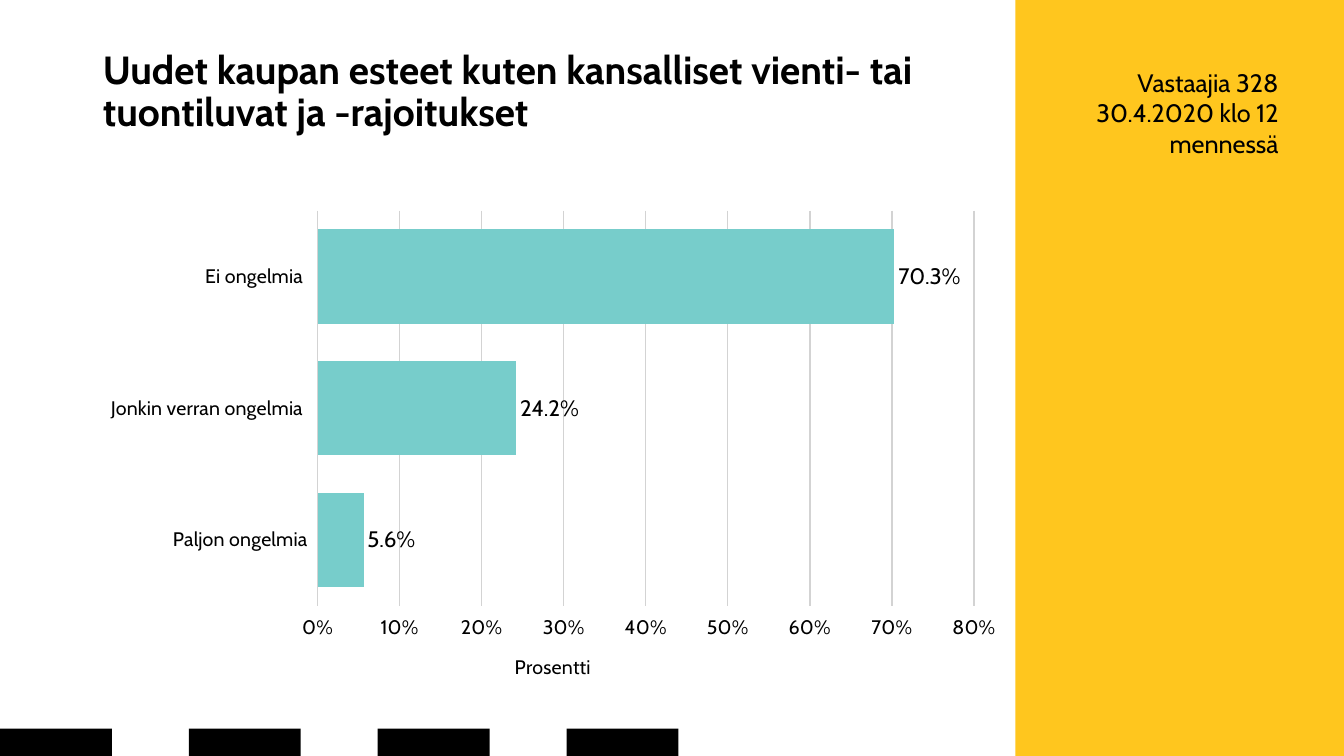
"""Build a survey slide with a bar chart of answers about new trade barriers."""
from lxml import etree
from pptx import Presentation
from pptx.chart.data import CategoryChartData
from pptx.dml.color import RGBColor
from pptx.enum.chart import XL_CHART_TYPE as ChartType, XL_LABEL_POSITION as LabelPosition
from pptx.enum.chart import XL_TICK_LABEL_POSITION as TickLabels, XL_TICK_MARK as Tick
from pptx.enum.shapes import MSO_SHAPE as Shape
from pptx.enum.text import MSO_ANCHOR as Anchor, MSO_AUTO_SIZE as AutoSize, PP_ALIGN as Align
from pptx.oxml.ns import qn
from pptx.util import Inches, Pt

HEADING = "Uudet kaupan esteet kuten kansalliset vienti- tai tuontiluvat ja -rajoitukset"
RESPONDENTS = ["Vastaajia 328", "30.4.2020 klo 12 mennessä"]
ANSWERS = {"Ei ongelmia ": 0.703, "Jonkin verran ongelmia ": 0.242, "Paljon ongelmia": 0.056}
AXIS_TITLE = "Prosentti"
FONT = "Cabin"
COLORS = {"text": "000000", "panel": "FFC61E", "block": "000000", "bar": "77CDCB", "grid": "D3D3D3"}
CHART_LEFT, CHART_TOP, CHART_WIDTH, CHART_HEIGHT = 0.92, 2, 9.14, 4.98
PLOT_LEFT, PLOT_TOP, PLOT_WIDTH, PLOT_HEIGHT = 3.15, 2.09, 6.51, 3.92
AXIS_TITLE_LEFT, AXIS_TITLE_TOP = 5.07, 6.45
BLOCK_COUNT, BLOCK_STEP = 4, 1.873


def color(name):
    return RGBColor.from_string(COLORS[name])


def style(font, size, bold=False):
    font.name, font.size, font.bold = FONT, Pt(size), bold
    font.color.rgb = color("text")


def add_rectangle(slide, left, top, width, height, fill):
    rectangle = slide.shapes.add_shape(
        Shape.RECTANGLE, Inches(left), Inches(top), Inches(width), Inches(height))
    rectangle.shadow.inherit = False
    rectangle.fill.solid()
    rectangle.fill.fore_color.rgb = color(fill)
    rectangle.line.fill.background()


def place(part, left, top, **settings):
    layout = part.get_or_add_layout() if hasattr(part, "get_or_add_layout") else part.find(qn("c:layout"))
    if layout is None:
        layout = etree.Element(qn("c:layout"))
        part.insert(0, layout)
    for old in list(layout):
        layout.remove(old)
    manual = etree.SubElement(layout, qn("c:manualLayout"))
    target = {"layoutTarget": "inner"} if settings else {}
    position = {"xMode": "edge", "yMode": "edge",
                "x": (left - CHART_LEFT) / CHART_WIDTH, "y": (top - CHART_TOP) / CHART_HEIGHT}
    for key, value in {**target, **position, **settings}.items():
        etree.SubElement(manual, qn(f"c:{key}")).set("val", str(value))


def add_heading(slide):
    title = slide.shapes.title
    title.left, title.top, title.width, title.height = map(Inches, (0.92, 0.4, 9.23, 1.04))
    frame = title.text_frame
    frame.auto_size = AutoSize.NONE
    frame.word_wrap = True
    frame.vertical_anchor = Anchor.MIDDLE
    paragraph = frame.paragraphs[0]
    paragraph.alignment = Align.LEFT
    paragraph.line_spacing = 0.9
    run = paragraph.add_run()
    run.text = HEADING
    style(run.font, 28, bold=True)


def add_respondents(slide):
    frame = slide.shapes.add_textbox(
        Inches(10.71), Inches(0.62), Inches(2.07), Inches(1.01)).text_frame
    frame.word_wrap = True
    frame.auto_size = AutoSize.SHAPE_TO_FIT_TEXT
    for index, line in enumerate(RESPONDENTS):
        paragraph = frame.add_paragraph() if index else frame.paragraphs[0]
        paragraph.alignment = Align.RIGHT
        run = paragraph.add_run()
        run.text = line
        style(run.font, 18)


def add_answer_chart(slide):
    answers = CategoryChartData(number_format="0.0%")
    answers.categories = list(ANSWERS)
    answers.add_series("Series 1", list(ANSWERS.values()))
    chart = slide.shapes.add_chart(
        ChartType.BAR_CLUSTERED, Inches(CHART_LEFT), Inches(CHART_TOP),
        Inches(CHART_WIDTH), Inches(CHART_HEIGHT), answers).chart
    style(chart.font, 18)
    chart.has_legend = False
    chart.has_title = False

    plot = chart.plots[0]
    plot.gap_width = 40
    plot.vary_by_categories = False
    bars = plot.series[0].format
    bars.fill.solid()
    bars.fill.fore_color.rgb = color("bar")
    bars.line.fill.background()
    plot.has_data_labels = True
    labels = plot.data_labels
    labels.show_value = True
    labels.number_format, labels.number_format_is_linked = "0.0%", False
    labels.position = LabelPosition.OUTSIDE_END
    style(labels.font, 16)

    answer_axis, percent_axis = chart.category_axis, chart.value_axis
    for axis in (answer_axis, percent_axis):
        axis.major_tick_mark, axis.minor_tick_mark = Tick.CROSS, Tick.NONE
        axis.format.line.fill.background()
        style(axis.tick_labels.font, 14)
    answer_axis.reverse_order = True
    percent_axis.tick_label_position = TickLabels.HIGH
    percent_axis.minimum_scale, percent_axis.maximum_scale = 0, 0.8
    percent_axis.major_unit = 0.1
    percent_axis.tick_labels.number_format = "0%"
    percent_axis.tick_labels.number_format_is_linked = False
    gridline = percent_axis.major_gridlines.format.line
    gridline.color.rgb, gridline.width = color("grid"), Pt(1)

    axis_title = percent_axis.axis_title
    run = axis_title.text_frame.paragraphs[0].add_run()
    run.text = AXIS_TITLE
    style(run.font, 14)
    place(axis_title._element, AXIS_TITLE_LEFT, AXIS_TITLE_TOP)
    place(chart._chartSpace.chart.plotArea, PLOT_LEFT, PLOT_TOP,
          w=PLOT_WIDTH / CHART_WIDTH, h=PLOT_HEIGHT / CHART_HEIGHT)


def main():
    deck = Presentation()
    deck.slide_width, deck.slide_height = Inches(13.33), Inches(7.5)
    slide = deck.slides.add_slide(deck.slide_layouts[5])
    add_rectangle(slide, 10.07, 0, 3.26, 7.5, "panel")
    for index in range(BLOCK_COUNT):
        add_rectangle(slide, index * BLOCK_STEP, 7.23, 1.11, 0.27, "block")
    add_heading(slide)
    add_respondents(slide)
    add_answer_chart(slide)
    deck.save("out.pptx")


if __name__ == "__main__":
    main()
